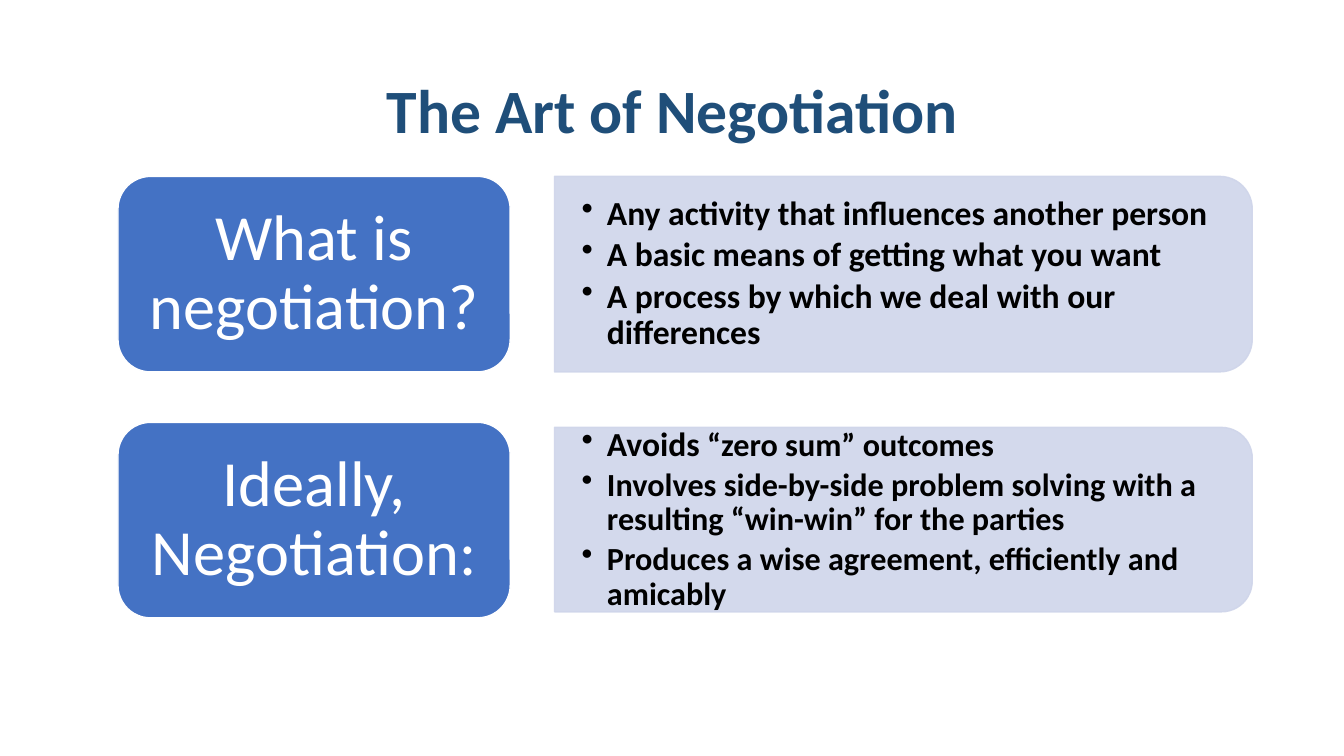
from dataclasses import dataclass

from lxml import etree
from pptx import Presentation
from pptx.dml.color import RGBColor
from pptx.enum.shapes import MSO_SHAPE
from pptx.enum.text import MSO_ANCHOR, MSO_AUTO_SIZE, PP_ALIGN
from pptx.oxml.ns import qn
from pptx.util import Pt

PX = 9144  # EMU per px, 100 px to the inch


@dataclass(frozen=True)
class Theme:
    font: str = "Calibri"
    title: str = "1F4E79"
    label: str = "4472C4"
    panel: str = "CFD5EA"
    panel_alpha: int = 90
    white: str = "FFFFFF"
    ink: str = "000000"
    title_size: int = 44
    label_size: int = 46
    lead_size: int = 24


T = Theme()

# Each row: label, label top, panel top, panel height, spacing, bullets as (text, size) runs
ROWS = [
    ("What is negotiation?", 175, 175, 194, 3.6, [
        [("Any activity that influences another person", 24)],
        [("A basic means of getting what you want", 24)],
        [("A process by which we deal with our differences", 24)],
    ]),
    ("Ideally, Negotiation:", 419, 424, 183, 3.45, [
        [("Avoids", T.lead_size), (" “zero sum” outcomes", 23)],
        [("Involves side-by-side problem solving with a resulting “win-win” for the parties", 23)],
        [("Produces a wise agreement, efficiently and amicably", 23)],
    ]),
]


def px(*lengths):
    return [round(n * PX) for n in lengths]


def set_all(obj, **values):
    for name, value in values.items():
        setattr(obj, name, value)


def add_run(p, text, size, color, bold=False):
    r = p.add_run()
    r.text = text
    set_all(r.font, name=T.font, size=Pt(size), bold=bold)
    r.font.color.rgb = RGBColor.from_string(color)


def frame(sp, inset_x, inset_y):
    tf = sp.text_frame
    x, y = px(inset_x, inset_y)
    set_all(tf, word_wrap=True, auto_size=MSO_AUTO_SIZE.NONE,
            vertical_anchor=MSO_ANCHOR.MIDDLE,
            margin_left=x, margin_right=x, margin_top=y, margin_bottom=y)
    return tf


def add_plain_shape(s, kind, box, fill, line):
    sp = s.shapes.add_shape(kind, *px(*box))
    sp.shadow.inherit = False
    sp.fill.solid()
    sp.fill.fore_color.rgb = RGBColor.from_string(fill)
    sp.line.color.rgb = RGBColor.from_string(line)
    sp.line.width = Pt(1)
    return sp


def add_title(s, box, text):
    title = s.shapes.title
    set_all(title, **dict(zip(("left", "top", "width", "height"), px(*box))))
    p = frame(title, 10, 5).paragraphs[0]
    set_all(p, alignment=PP_ALIGN.CENTER, line_spacing=0.9)
    add_run(p, text, T.title_size, T.title, bold=True)


def add_label(s, box, text):
    sp = add_plain_shape(s, MSO_SHAPE.ROUNDED_RECTANGLE, box, T.label, T.white)
    p = frame(sp, 19, 10).paragraphs[0]
    set_all(p, alignment=PP_ALIGN.CENTER, line_spacing=0.9)
    add_run(p, text, T.label_size, T.white)


def add_panel(s, box, bullets, space_after):
    x, y, w, h = box

    # Upright shape turned a quarter, so its rounded corners face right
    turned = (x + (w - h) / 2, y + (h - w) / 2, h, w)
    sp = add_plain_shape(s, MSO_SHAPE.ROUND_2_SAME_RECTANGLE, turned, T.panel, T.panel)
    sp.rotation = 90
    for color in sp._element.spPr.iter(qn("a:srgbClr")):
        etree.SubElement(color, qn("a:alpha"), val=str(T.panel_alpha * 1000))

    # Bulleted text, inset from the panel's rounded end
    pad = 9
    tf = frame(s.shapes.add_textbox(*px(x, y + pad, w - pad, h - 2 * pad)), 27, 14)
    for i, runs in enumerate(bullets):
        p = tf.add_paragraph() if i else tf.paragraphs[0]
        pPr = p._p.get_or_add_pPr()
        indent, = px(25)
        pPr.set("marL", str(indent))
        pPr.set("indent", str(-indent))
        etree.SubElement(pPr, qn("a:buChar"), char="•")
        set_all(p, level=1, line_spacing=0.9, space_after=Pt(space_after))
        for text, size in runs:
            add_run(p, text, size, T.ink, bold=True)


def main():
    prs = Presentation()
    prs.slide_width, prs.slide_height = px(1333, 750)
    s = prs.slides.add_slide(prs.slide_layouts[5])
    add_title(s, (92, 40, 1150, 145), "The Art of Negotiation")
    for label, label_top, panel_top, panel_height, space_after, bullets in ROWS:
        add_panel(s, (550, panel_top, 692, panel_height), bullets, space_after)
        add_label(s, (117, label_top, 389, 194), label)
    prs.save("out.pptx")


if __name__ == "__main__":
    main()
